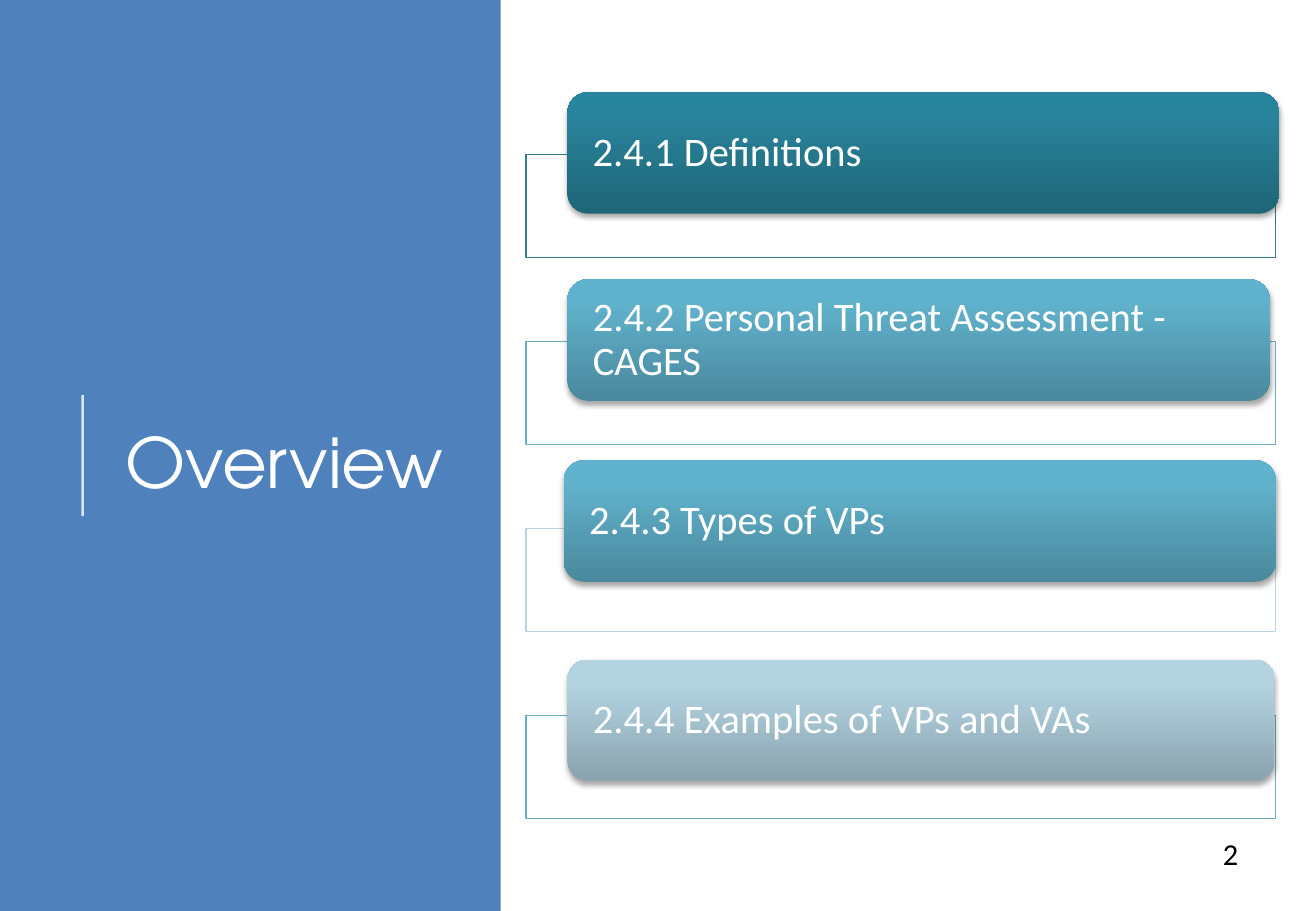
from lxml import etree
from pptx import Presentation
from pptx.dml.color import RGBColor
from pptx.enum.shapes import MSO_CONNECTOR, MSO_SHAPE
from pptx.enum.text import MSO_ANCHOR, MSO_AUTO_SIZE, PP_ALIGN
from pptx.oxml.ns import qn
from pptx.util import Inches, Pt

RECT, ROUND = MSO_SHAPE.RECTANGLE, MSO_SHAPE.ROUNDED_RECTANGLE
STRAIGHT = MSO_CONNECTOR.STRAIGHT
MIDDLE, NO_FIT = MSO_ANCHOR.MIDDLE, MSO_AUTO_SIZE.NONE
LEFT, CENTER, RIGHT = PP_ALIGN.LEFT, PP_ALIGN.CENTER, PP_ALIGN.RIGHT

WHITE = RGBColor(0xFF, 0xFF, 0xFF)
BLACK = RGBColor(0x00, 0x00, 0x00)
BLUE = RGBColor(0x4F, 0x81, 0xBD)
DEEP = RGBColor(0x34, 0x7D, 0x91)
AQUA = RGBColor(0x6B, 0xAD, 0xC3)
PALE = RGBColor(0xB9, 0xD4, 0xDF)

# Card shades from bottom to top
STOPS = (0, 80, 100)
TEAL = [RGBColor.from_string(c) for c in ("1F6577", "29839B", "27859E")]
SKY = [RGBColor.from_string(c) for c in ("4A889D", "60B1CB", "5FB3CE")]
MIST = [RGBColor.from_string(c) for c in ("8AA3AE", "B3D3E1", "B3D5E3")]

# Text, frame colour, card shades, card left, top and width
TOPICS = [
    ("2.4.1 Definitions", DEEP, TEAL, 4.67, 0.76, 5.86),
    ("2.4.2 Personal Threat Assessment - CAGES", AQUA, SKY, 4.67, 2.3, 5.78),
    ("2.4.3 Types of VPs", PALE, SKY, 4.64, 3.79, 5.86),
    ("2.4.4 Examples of VPs and VAs", AQUA, MIST, 4.67, 5.43, 5.82),
]
FIRST, STEP = 1.27, 1.54


def add(parent, tag, **attrs):
    return etree.SubElement(parent, qn(tag), {k: str(v) for k, v in attrs.items()})


def write(shape, text, size, face, color, align):
    frame = shape.text_frame
    frame.word_wrap = True
    frame.text = text
    para = frame.paragraphs[0]
    para.alignment = align
    font = para.runs[0].font
    font.size, font.name, font.color.rgb = Pt(size), face, color
    return para


def add_box(slide, kind, spot, fill=None, edge=None):
    shape = slide.shapes.add_shape(kind, *map(Inches, spot))
    shape.shadow.inherit = False
    if fill is None:
        shape.fill.background()
    else:
        shape.fill.solid()
        shape.fill.fore_color.rgb = fill
    if edge is None:
        shape.line.fill.background()
    else:
        shape.line.color.rgb = edge
        shape.line.width = Pt(0.75)
    return shape


def shade(shape, colors):
    shape.fill.gradient()
    shape.fill.gradient_angle = 90
    stops = shape._element.spPr.find(".//" + qn("a:gsLst"))
    for stop in list(stops):
        stops.remove(stop)
    for pos, color in zip(STOPS, colors):
        stop = add(stops, "a:gs", pos=pos * 1000)
        add(stop, "a:srgbClr", val=color)


def add_shadow(shape):
    effects = shape._element.spPr.find(qn("a:effectLst"))
    outer = add(effects, "a:outerShdw", blurRad=Pt(3.1), dist=Pt(1.8),
                dir=90 * 60000, rotWithShape=0)
    add(add(outer, "a:srgbClr", val=BLACK), "a:alpha", val=35000)


def add_card(slide, text, colors, left, top, width):
    card = add_box(slide, ROUND, (left, top, width, 1))
    shade(card, colors)
    add_shadow(card)
    frame = card.text_frame
    frame.vertical_anchor = MIDDLE
    frame.margin_left = frame.margin_right = Inches(0.16)
    para = write(card, text, 24, "Calibri", WHITE, LEFT)
    para.line_spacing = 0.9


def add_rule(slide):
    rule = slide.shapes.add_connector(
        STRAIGHT, Inches(0.68), Inches(4.25), Inches(0.68), Inches(3.25))
    rule.line.color.rgb = WHITE
    rule.line.width = Pt(1.5)
    props = rule._element.spPr
    add(props.find(".//" + qn("a:srgbClr")), "a:alpha", val=80000)
    add(props, "a:effectLst")


def set_title(slide):
    title = slide.shapes.title
    title.left, title.top = Inches(0.84), Inches(0.78)
    title.width, title.height = Inches(3), Inches(6.02)
    title.text_frame.auto_size = NO_FIT
    title.text_frame.vertical_anchor = MIDDLE
    write(title, "Overview", 41, "TeX Gyre Adventor", WHITE, CENTER)


def main():
    deck = Presentation()
    deck.slide_width, deck.slide_height = Inches(10.83), Inches(7.5)
    slide = deck.slides.add_slide(deck.slide_layouts[5])

    # Blue side panel, behind the title
    panel = add_box(slide, RECT, (0, 0, 4.12, 7.5), BLUE)
    slide.shapes.title._element.addprevious(panel._element)
    set_title(slide)
    add_rule(slide)

    # Topic frames with their cards
    for row, (text, edge, colors, left, top, width) in enumerate(TOPICS):
        fill = WHITE if row == 0 else None
        add_box(slide, RECT, (4.33, FIRST + row * STEP, 6.17, 0.85), fill, edge)
        add_card(slide, text, colors, left, top, width)

    # Page number
    page = slide.shapes.add_textbox(
        Inches(7.76), Inches(6.83), Inches(2.53), Inches(0.4))
    write(page, "2", 18, "Calibri", BLACK, RIGHT)

    deck.save("out.pptx")


if __name__ == "__main__":
    main()
